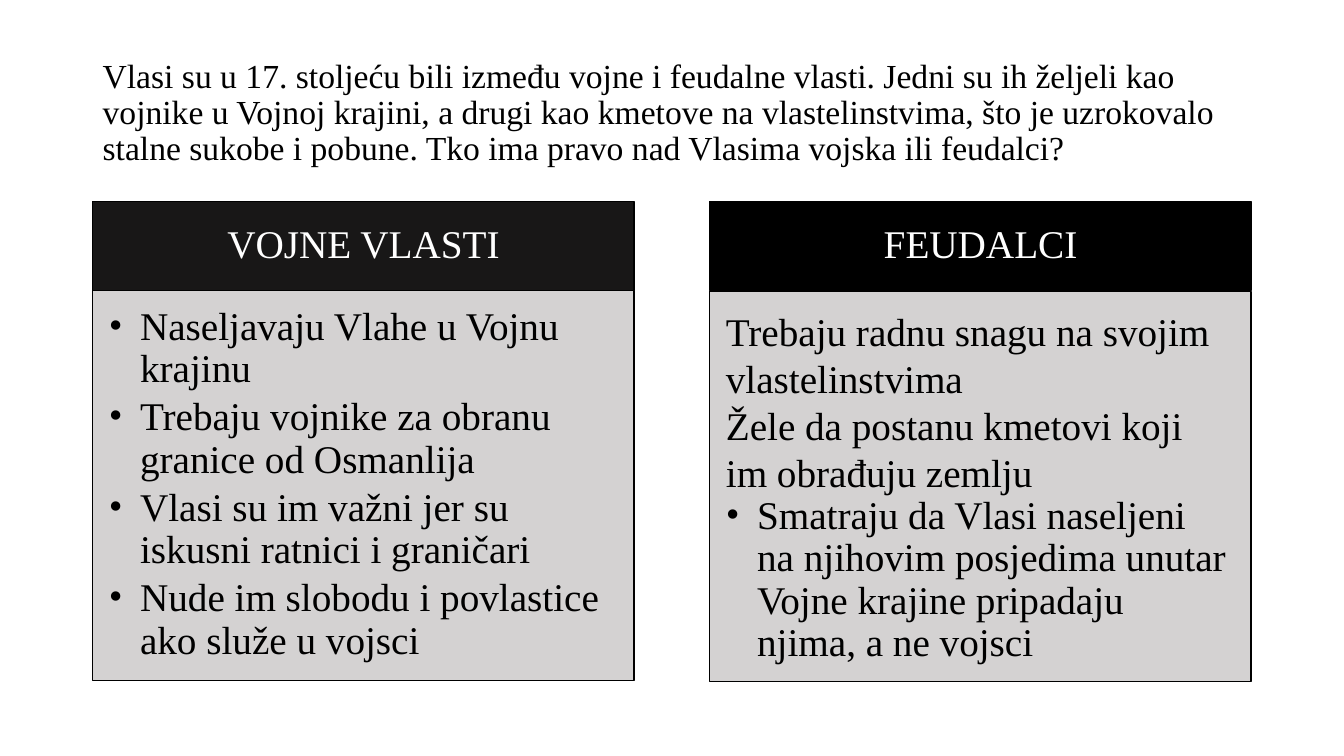
from dataclasses import dataclass

from lxml import etree
from pptx import Presentation
from pptx.dml.color import RGBColor
from pptx.enum.shapes import MSO_SHAPE
from pptx.enum.text import MSO_ANCHOR, PP_ALIGN
from pptx.oxml.ns import qn
from pptx.util import Inches, Pt

RECTANGLE = MSO_SHAPE.RECTANGLE
TOP, MIDDLE = MSO_ANCHOR.TOP, MSO_ANCHOR.MIDDLE
LEFT, CENTER = PP_ALIGN.LEFT, PP_ALIGN.CENTER


@dataclass(frozen=True)
class Theme:
    font: str = "Times New Roman"
    title_size: int = 24
    text_size: int = 28
    dark: str = "000000"
    light: str = "FFFFFF"
    body_fill: str = "D0CECE"
    body_alpha: str = "90000"


theme = Theme()


def add_box(slide, left, top, height, fill, anchor, insets):
    shape = slide.shapes.add_shape(RECTANGLE, Inches(left), Inches(top), Inches(5.37), Inches(height))
    shape.shadow.inherit = False
    shape.fill.solid()
    shape.fill.fore_color.rgb = RGBColor.from_string(fill)
    shape.line.color.rgb = RGBColor.from_string(theme.dark)
    shape.line.width = Pt(1)
    frame = shape.text_frame
    frame.word_wrap = True
    frame.vertical_anchor = anchor
    frame.margin_left, frame.margin_top, frame.margin_right, frame.margin_bottom = map(Inches, insets)
    return shape


def style_paragraph(paragraph, size, color, alignment=LEFT, spacing=0.9):
    paragraph.alignment = alignment
    paragraph.line_spacing = spacing
    for run in paragraph.runs:
        run.font.name = theme.font
        run.font.size = Pt(size)
        run.font.color.rgb = RGBColor.from_string(color)


presentation = Presentation()
presentation.slide_width = Inches(13.33)
presentation.slide_height = Inches(7.5)
slide = presentation.slides.add_slide(presentation.slide_layouts[6])

title = slide.shapes.add_textbox(Inches(0.92), Inches(0.4), Inches(11.5), Inches(1.45))
title.text_frame.word_wrap = True
title.text_frame.vertical_anchor = MIDDLE
title.text_frame.text = (
    "Vlasi su u 17. stoljeću bili između vojne i feudalne vlasti. "
    "Jedni su ih željeli kao vojnike u Vojnoj krajini, a drugi kao kmetove "
    "na vlastelinstvima, što je uzrokovalo stalne sukobe i pobune. "
    "Tko ima pravo nad Vlasima vojska ili feudalci?"
)
style_paragraph(title.text_frame.paragraphs[0], theme.title_size, theme.dark)

columns = [
    (0.92, 2.88, "181717", "VOJNE VLASTI", [], [
        "Naseljavaju Vlahe u Vojnu krajinu",
        "Trebaju vojnike za obranu granice od Osmanlija",
        "Vlasi su im važni jer su iskusni ratnici i graničari",
        "Nude im slobodu i povlastice ako služe u vojsci",
    ]),
    (7.04, 2.89, "000000", "FEUDALCI", [
        "Trebaju radnu snagu na svojim vlastelinstvima",
        "Žele da postanu kmetovi koji im obrađuju zemlju",
    ], [
        "Smatraju da Vlasi naseljeni na njihovim posjedima unutar "
        "Vojne krajine pripadaju njima, a ne vojsci",
    ]),
]

for left, body_top, heading_fill, heading_text, plain_points, bullet_points in columns:
    heading = add_box(slide, left, 2, 0.88, heading_fill, MIDDLE, (0.22, 0.12, 0.22, 0.12))
    heading.text_frame.text = heading_text
    style_paragraph(heading.text_frame.paragraphs[0], theme.text_size, theme.light, CENTER)

    body = add_box(slide, left, body_top, 3.87, theme.body_fill, TOP, (0.16, 0.16, 0.22, 0.24))
    fill_color = body.fill._xPr.find(qn("a:solidFill")).find(qn("a:srgbClr"))
    etree.SubElement(fill_color, qn("a:alpha"), val=theme.body_alpha)
    body.text_frame.text = "\n".join(plain_points + bullet_points)
    for index, paragraph in enumerate(body.text_frame.paragraphs):
        if index < len(plain_points):
            style_paragraph(paragraph, theme.text_size, theme.dark, spacing=1.0)
            continue
        properties = paragraph._p.get_or_add_pPr()
        properties.set("marL", str(Inches(0.31)))
        properties.set("indent", str(-Inches(0.31)))
        etree.SubElement(properties, qn("a:buFont"), typeface=theme.font)
        etree.SubElement(properties, qn("a:buChar"), char="•")
        style_paragraph(paragraph, theme.text_size, theme.dark)
        paragraph.space_after = Pt(theme.text_size * 0.15)

presentation.save("out.pptx")
